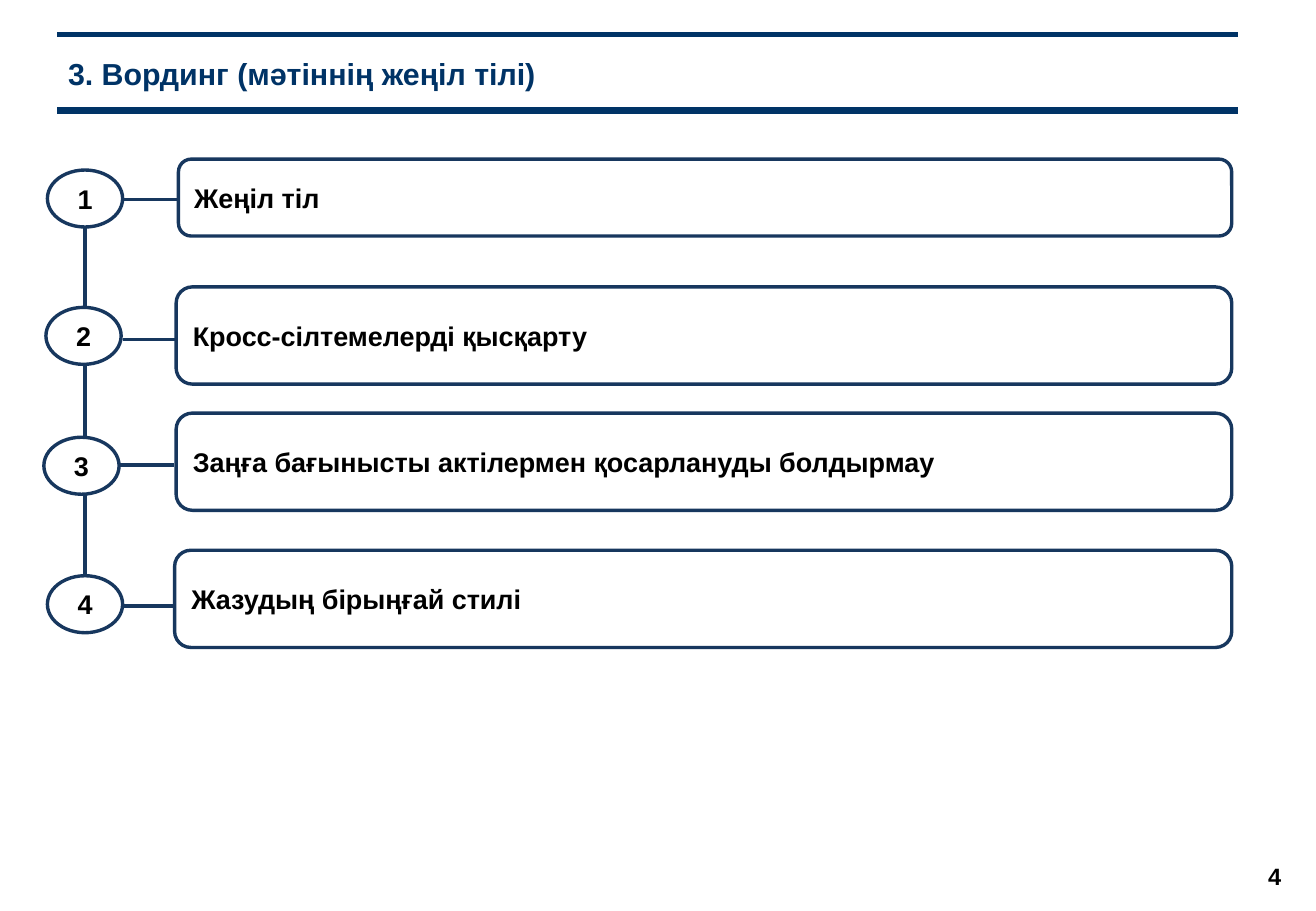
from pptx import Presentation
from pptx.dml.color import RGBColor
from pptx.enum import shapes, text
from pptx.oxml import ns
from pptx.util import Pt
from lxml import etree

# Content: number, wording, badge (left, top), box (left, top, height), link (start, end, y)
TITLE = "3. Вординг (мәтіннің жеңіл тілі)"
PAGE = "4"
STEPS = [
    ("1", "Жеңіл тіл", (28.1, 100.8), (105.8, 94.3, 45.6), (72.7, 105.8, 118.1)),
    ("2", "Кросс-сілтемелерді қысқарту", (27.2, 182.2), (104.4, 170.1, 57.6), (72.7, 104.4, 201.4)),
    ("3", "Заңға бағынысты актілермен қосарлануды болдырмау", (26, 259.2), (104.4, 244.9, 57.6),
     (70.6, 103, 275.6)),
    ("4", "Жазудың бірыңғай стилі", (28.1, 341.3), (103.5, 326.2, 57.6), (72, 103.7, 359.2)),
]

# Format and layout
NAVY, STEEL, BLACK, WHITE = "003366", "17375E", "000000", "FFFFFF"
FONT = {"name": "Arial", "bold": True}
BADGE_W, BADGE_H = 44.6, 33.8
BOX_RIGHT = 730.1
SPINE_X = 50.4
RULES = [(20.2, 3), (65.5, 4.5)]
RULE_LEFT, RULE_RIGHT = 33.8, 733.7


def color(value):
    return RGBColor.from_string(value)


def write(shape, words, size, ink, align):
    frame = shape.text_frame
    for key, value in {"text": words, "word_wrap": True, "auto_size": text.MSO_AUTO_SIZE.NONE,
                       "vertical_anchor": text.MSO_ANCHOR.MIDDLE}.items():
        setattr(frame, key, value)
    paragraph = frame.paragraphs[0]
    paragraph.alignment = align
    font = paragraph.runs[0].font
    for key, value in {**FONT, "size": Pt(size)}.items():
        setattr(font, key, value)
    font.color.rgb = color(ink)


def add_line(x1, y1, x2, y2, ink=STEEL, width=2):
    line = slide.shapes.add_connector(shapes.MSO_CONNECTOR.STRAIGHT, Pt(x1), Pt(y1), Pt(x2), Pt(y2))
    line.line.color.rgb = color(ink)
    line.line.width = Pt(width)
    etree.SubElement(line._element.spPr, ns.qn("a:effectLst"))


def add_panel(kind, place, words, size=16, align=text.PP_ALIGN.CENTER, outline=STEEL):
    panel = slide.shapes.add_shape(kind, *map(Pt, place))
    panel.shadow.inherit = False
    panel.fill.solid()
    panel.fill.fore_color.rgb = color(WHITE)
    if outline:
        panel.line.color.rgb = color(outline)
        panel.line.width = Pt(2)
    else:
        panel.line.fill.background()
    write(panel, words, size, BLACK, align)


prs = Presentation()
prs.slide_width, prs.slide_height = Pt(780), Pt(540)
slide = prs.slides.add_slide(prs.slide_layouts[5])

# Heading between two rules
for y, width in RULES:
    add_line(RULE_LEFT, y, RULE_RIGHT, y, NAVY, width)
heading = slide.shapes.title
for key, value in {"left": 33.1, "top": 20.9, "width": 703.4, "height": 45.4}.items():
    setattr(heading, key, Pt(value))
write(heading, TITLE, 18, NAVY, text.PP_ALIGN.LEFT)

# Spine from the first badge to the last
add_line(SPINE_X, STEPS[0][2][1] + BADGE_H, SPINE_X, STEPS[-1][2][1])

# Steps: link, box and numbered badge
for number, wording, badge, (left, top, height), (start, end, y) in STEPS:
    add_line(start, y, end, y)
    add_panel(shapes.MSO_SHAPE.ROUNDED_RECTANGLE, (left, top, BOX_RIGHT - left, height), wording,
              align=text.PP_ALIGN.JUSTIFY)
    add_panel(shapes.MSO_SHAPE.OVAL, (*badge, BADGE_W, BADGE_H), number)

# Page number
add_panel(shapes.MSO_SHAPE.RECTANGLE, (732.2, 499.7, 46.8, 39.6), PAGE, size=14, outline=None)

prs.save("out.pptx")
